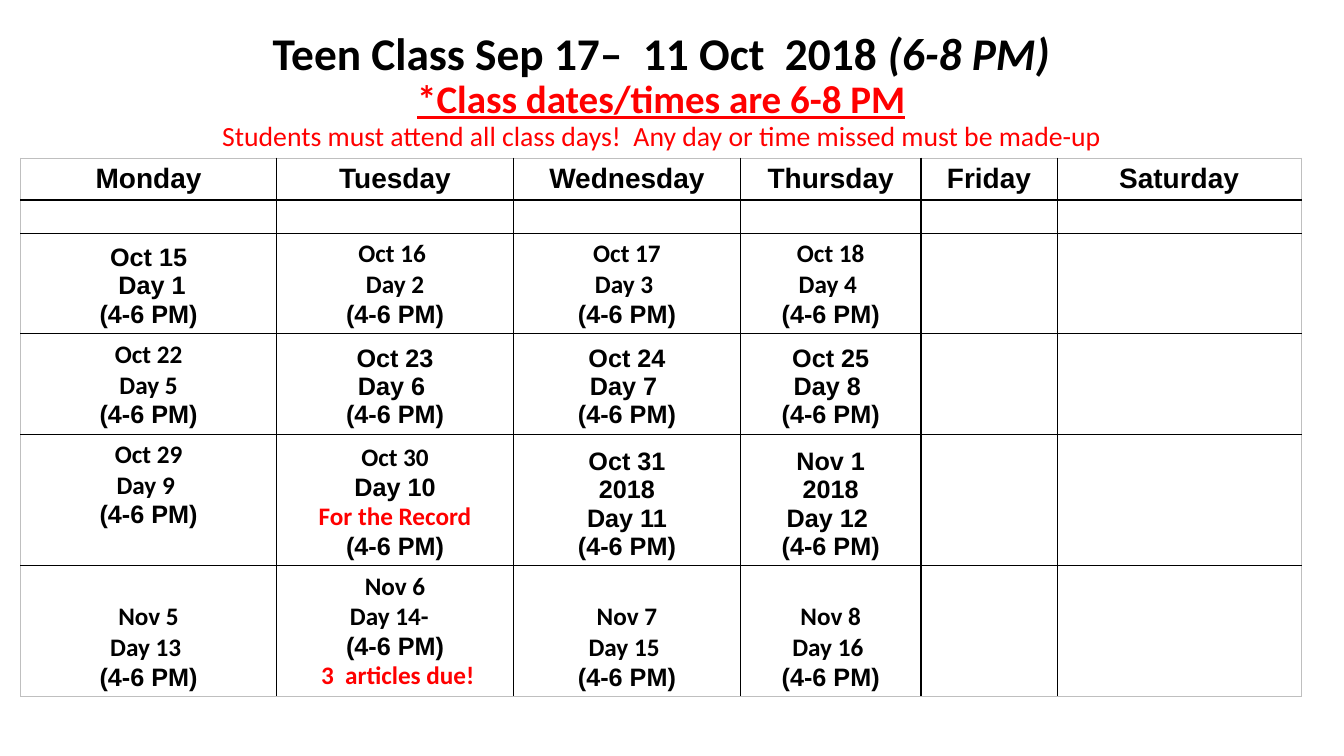
from dataclasses import dataclass

from lxml import etree
from pptx import Presentation
from pptx.dml.color import RGBColor
from pptx.enum import text
from pptx.oxml import ns
from pptx.util import Cm, Pt


@dataclass(frozen=True)
class Theme:
    black: str = "000000"
    white: str = "FFFFFF"
    red: str = "FF0000"
    frame: str = "BFBFBF"
    sans: str = "Calibri"
    grid: str = "Arial"
    title_size: float = 32.4
    dates_size: float = 27.9
    notice_size: float = 19.8
    weekday_size: float = 20
    day_size: float = 18


THEME = Theme()


@dataclass(frozen=True)
class Line:
    """One styled piece of text."""
    text: str
    font: str = THEME.grid
    size: float = THEME.day_size
    color: str = THEME.black
    bold: bool = True
    italic: bool = False
    underline: bool = False


HOURS = Line("(4-6 PM)")


def class_day(font: str, *labels: str) -> list[Line]:
    """Lines of a calendar cell, closed by the class hours."""
    return [Line(label, font) for label in labels] + [HOURS]


def alert(label: str) -> Line:
    return Line(label, THEME.sans, color=THEME.red)


TITLE_ROWS = [
    [Line("Teen Class Sep 17–  11 Oct  2018 ", THEME.sans, THEME.title_size),
     Line("(6-8 PM)", THEME.sans, THEME.title_size, italic=True)],
    [Line("*Class dates/times are 6-8 PM", THEME.sans, THEME.dates_size,
          THEME.red, underline=True)],
    [Line("Students must attend all class days!  Any day or time missed must be made-up",
          THEME.sans, THEME.notice_size, THEME.red, bold=False)],
]
WEEKDAYS = ["Monday", "Tuesday", "Wednesday", "Thursday", "Friday", "Saturday"]
COLUMN_WIDTHS = [6.45, 5.97, 5.72, 4.55, 3.43, 6.15]
ROW_HEIGHTS = [1.04, 0.84, 2.53, 2.54, 3.31, 3.3]
CALENDAR = [
    [[Line(weekday, size=THEME.weekday_size)] for weekday in WEEKDAYS],
    [],
    [class_day(THEME.grid, "Oct 15", " Day 1"),
     class_day(THEME.sans, "Oct 16 ", "Day 2"),
     class_day(THEME.sans, "Oct 17", "Day 3 "),
     class_day(THEME.sans, "Oct 18", "Day 4 ")],
    [class_day(THEME.sans, "Oct 22", " Day 5 "),
     class_day(THEME.grid, "Oct 23", "Day 6 "),
     class_day(THEME.grid, "Oct 24", "Day 7 "),
     class_day(THEME.grid, "Oct 25", "Day 8 ")],
    [class_day(THEME.sans, "Oct 29", "Day 9 "),
     [Line("Oct 30", THEME.sans), Line("Day 10"), alert("For the Record"), HOURS],
     class_day(THEME.grid, "Oct 31", "2018", "Day 11"),
     class_day(THEME.grid, "Nov 1", "2018", "Day 12 ")],
    [class_day(THEME.sans, "Nov 5", "Day 13 "),
     class_day(THEME.sans, "Nov 6", "Day 14-  ") + [alert(" 3  articles due!")],
     class_day(THEME.sans, "Nov 7", "Day 15 "),
     class_day(THEME.sans, "Nov 8", "Day 16 ")],
]
TOP_ANCHORED = (4, 0)


def add_line(paragraph, line: Line) -> None:
    run = paragraph.add_run()
    run.text = line.text
    font = run.font
    font.name, font.size = line.font, Pt(line.size)
    font.bold, font.italic, font.underline = line.bold, line.italic, line.underline
    font.color.rgb = RGBColor.from_string(line.color)


def add_break(paragraph, size: float) -> None:
    """Line break that is no taller than its own line."""
    paragraph.add_line_break()
    line_break = paragraph._p.findall(ns.qn("a:br"))[-1]
    etree.SubElement(line_break, ns.qn("a:rPr"), sz=str(round(size * 100)))


def fill_title(title) -> None:
    title.left, title.top, title.width, title.height = Cm(3.28), Cm(0.69), Cm(26.77), Cm(3.23)
    frame = title.text_frame
    frame.word_wrap = True
    frame.auto_size = text.MSO_AUTO_SIZE.NONE
    frame.vertical_anchor = text.MSO_ANCHOR.MIDDLE
    paragraph = frame.paragraphs[0]
    paragraph.alignment = text.PP_ALIGN.CENTER
    paragraph.line_spacing = 0.9
    for index, row in enumerate(TITLE_ROWS):
        if index:
            add_break(paragraph, TITLE_ROWS[index - 1][-1].size)
        for line in row:
            add_line(paragraph, line)


def set_borders(cell, colors: dict[str, str]) -> None:
    properties = cell._tc.get_or_add_tcPr()
    for position, (side, color) in enumerate(colors.items()):
        border = etree.Element(ns.qn(f"a:{side}"), w=str(Pt(1)))
        solid = etree.SubElement(border, ns.qn("a:solidFill"))
        etree.SubElement(solid, ns.qn("a:srgbClr"), val=color)
        properties.insert(position, border)


def fill_cell(cell, lines: list[Line], anchor) -> None:
    cell.fill.solid()
    cell.fill.fore_color.rgb = RGBColor.from_string(THEME.white)
    cell.vertical_anchor = anchor
    cell.margin_left = cell.margin_right = Cm(0.33)
    cell.margin_top = cell.margin_bottom = Cm(0.13 if lines else 0)
    frame = cell.text_frame
    for index, line in enumerate(lines):
        paragraph = frame.add_paragraph() if index else frame.paragraphs[0]
        paragraph.alignment = text.PP_ALIGN.CENTER
        add_line(paragraph, line)


def add_calendar(slide) -> None:
    rows, columns = len(ROW_HEIGHTS), len(COLUMN_WIDTHS)
    table = slide.shapes.add_table(rows, columns, Cm(0.52), Cm(3.99),
                                   Cm(sum(COLUMN_WIDTHS)), Cm(sum(ROW_HEIGHTS))).table
    table.first_row = table.horz_banding = False
    for column, width in zip(table.columns, COLUMN_WIDTHS):
        column.width = Cm(width)
    for r, (height, days) in enumerate(zip(ROW_HEIGHTS, CALENDAR)):
        table.rows[r].height = Cm(height)
        for c in range(columns):
            cell = table.cell(r, c)
            top = (r, c) == TOP_ANCHORED
            fill_cell(cell, days[c] if c < len(days) else [],
                      text.MSO_ANCHOR.TOP if top else text.MSO_ANCHOR.BOTTOM)
            outer = {"lnL": c == 0, "lnR": c == columns - 1,
                     "lnT": r == 0, "lnB": r == rows - 1}
            set_borders(cell, {side: THEME.frame if edge else THEME.black
                               for side, edge in outer.items()})


def main() -> None:
    presentation = Presentation()
    presentation.slide_width, presentation.slide_height = Cm(33.87), Cm(19.05)
    slide = presentation.slides.add_slide(presentation.slide_layouts[5])
    fill_title(slide.shapes.title)
    add_calendar(slide)
    presentation.save("out.pptx")


if __name__ == "__main__":
    main()
